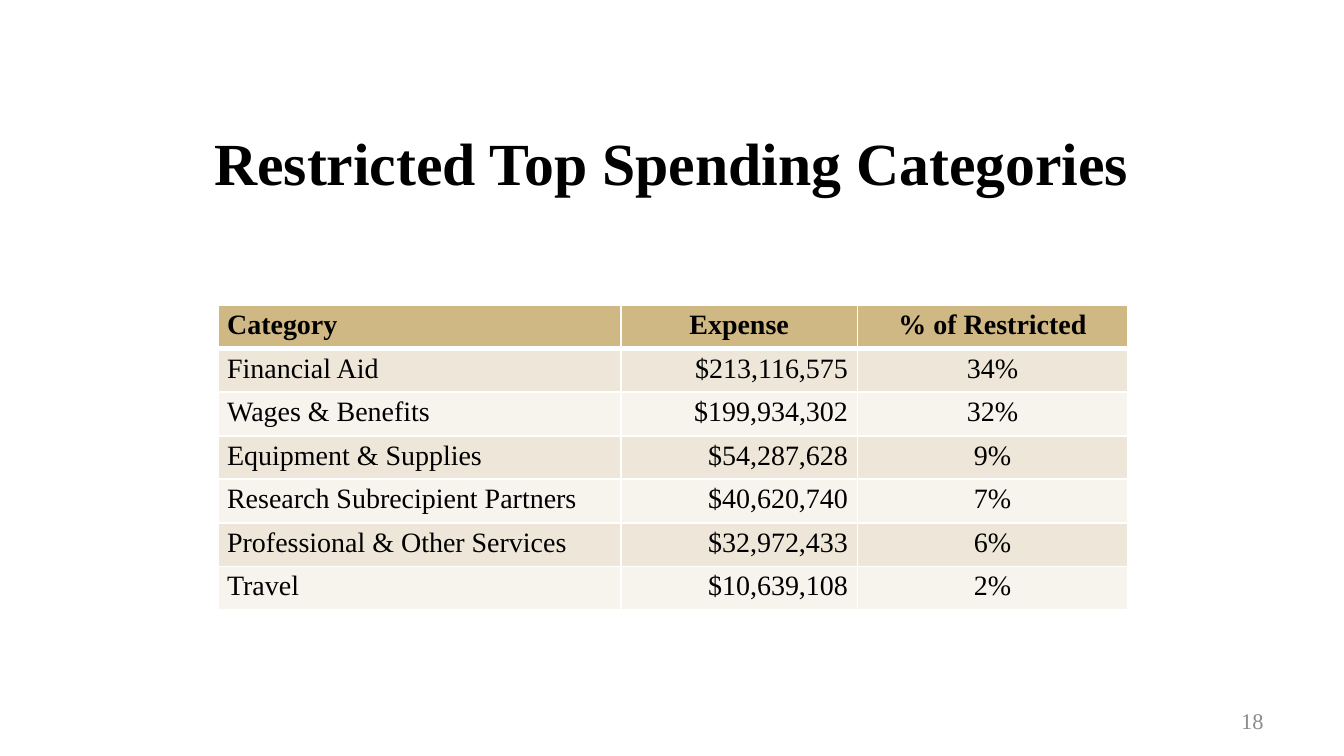
from dataclasses import dataclass

from lxml.etree import SubElement
from pptx import Presentation
from pptx.dml.color import RGBColor
from pptx.enum.text import MSO_ANCHOR, PP_ALIGN
from pptx.oxml.ns import qn
from pptx.util import Inches, Pt

FONT = "Times New Roman"
PAGE_WIDTH = 10
PAGE_HEIGHT = PAGE_WIDTH * 9 / 16
COLORS = {
    "text": "000000",
    "page_number": "8C8C8C",
    "header": "D0B884",
    "odd_row": "EEE6D9",
    "even_row": "F7F3ED",
    "border": "FFFFFF",
}


@dataclass
class Column:
    heading: str
    width: float
    heading_align: PP_ALIGN
    body_align: PP_ALIGN


@dataclass
class Spending:
    category: str
    expense: str
    share: str


COLUMNS = [
    Column("Category", 3, PP_ALIGN.LEFT, PP_ALIGN.LEFT),
    Column("Expense", 1.76, PP_ALIGN.CENTER, PP_ALIGN.RIGHT),
    Column("% of Restricted", 2.01, PP_ALIGN.CENTER, PP_ALIGN.CENTER),
]
SPENDING = [
    Spending("Financial Aid", "$213,116,575", "34%"),
    Spending("Wages & Benefits", "$199,934,302", "32%"),
    Spending("Equipment & Supplies", "$54,287,628", "9%"),
    Spending("Research Subrecipient Partners", "$40,620,740", "7%"),
    Spending("Professional & Other Services", "$32,972,433", "6%"),
    Spending("Travel", "$10,639,108", "2%"),
]


def write_text(frame, text: str, *, size: float, color: str = "text",
               bold: bool = False, align: PP_ALIGN = PP_ALIGN.LEFT) -> None:
    para = frame.paragraphs[0]
    para.alignment = align
    span = para.add_run()
    span.text = text
    span.font.name = FONT
    span.font.size = Pt(size)
    span.font.bold = bold
    span.font.color.rgb = RGBColor.from_string(COLORS[color])


def add_label(page, text: str, left: float, top: float, width: float,
              height: float, **text_format) -> None:
    box = page.shapes.add_textbox(Inches(left), Inches(top), Inches(width), Inches(height))
    box.text_frame.word_wrap = True
    box.text_frame.vertical_anchor = MSO_ANCHOR.MIDDLE
    write_text(box.text_frame, text, **text_format)


def set_borders(cell, top: float, bottom: float) -> None:
    properties = cell._tc.get_or_add_tcPr()
    for side, width in (("L", 1), ("R", 1), ("T", top), ("B", bottom)):
        line = SubElement(properties, qn(f"a:ln{side}"), w=str(Pt(width)))
        fill = SubElement(line, qn("a:solidFill"))
        SubElement(fill, qn("a:srgbClr"), val=COLORS["border"])


def fill_cell(cell, text: str, row: int, align: PP_ALIGN) -> None:
    # A thick rule separates the header from the body
    set_borders(cell, top=3 if row == 1 else 1, bottom=3 if row == 0 else 1)
    shade = "header" if row == 0 else "odd_row" if row % 2 else "even_row"
    cell.fill.solid()
    cell.fill.fore_color.rgb = RGBColor.from_string(COLORS[shade])
    cell.margin_left = cell.margin_right = Inches(0.07)
    cell.margin_top = cell.margin_bottom = Inches(0.035)
    write_text(cell.text_frame, text, size=15, bold=row == 0, align=align)


def add_spending_table(page, left: float, top: float, height: float) -> None:
    row_count = len(SPENDING) + 1
    width = sum(column.width for column in COLUMNS)
    table = page.shapes.add_table(row_count, len(COLUMNS), Inches(left), Inches(top),
                                  Inches(width), Inches(height)).table
    for row in table.rows:
        row.height = Inches(height / row_count)
    for index, column in enumerate(COLUMNS):
        table.columns[index].width = Inches(column.width)
        fill_cell(table.cell(0, index), column.heading, 0, column.heading_align)
    for row, item in enumerate(SPENDING, start=1):
        values = (item.category, item.expense, item.share)
        for index, (column, value) in enumerate(zip(COLUMNS, values)):
            fill_cell(table.cell(row, index), value, row, column.body_align)


def main() -> None:
    deck = Presentation()
    deck.slide_width, deck.slide_height = Inches(PAGE_WIDTH), Inches(PAGE_HEIGHT)
    page = deck.slides.add_slide(deck.slide_layouts[6])

    # Title
    add_label(page, "Restricted Top Spending Categories", 0.5, 0.8, 9, 0.8,
              size=32, bold=True, align=PP_ALIGN.CENTER)
    # Page number
    add_label(page, "18", 7.17, 5.21, 2.33, 0.3,
              size=12, color="page_number", align=PP_ALIGN.RIGHT)
    # Spending table
    add_spending_table(page, 1.62, 2.27, 2.27)

    deck.save("out.pptx")


if __name__ == "__main__":
    main()
